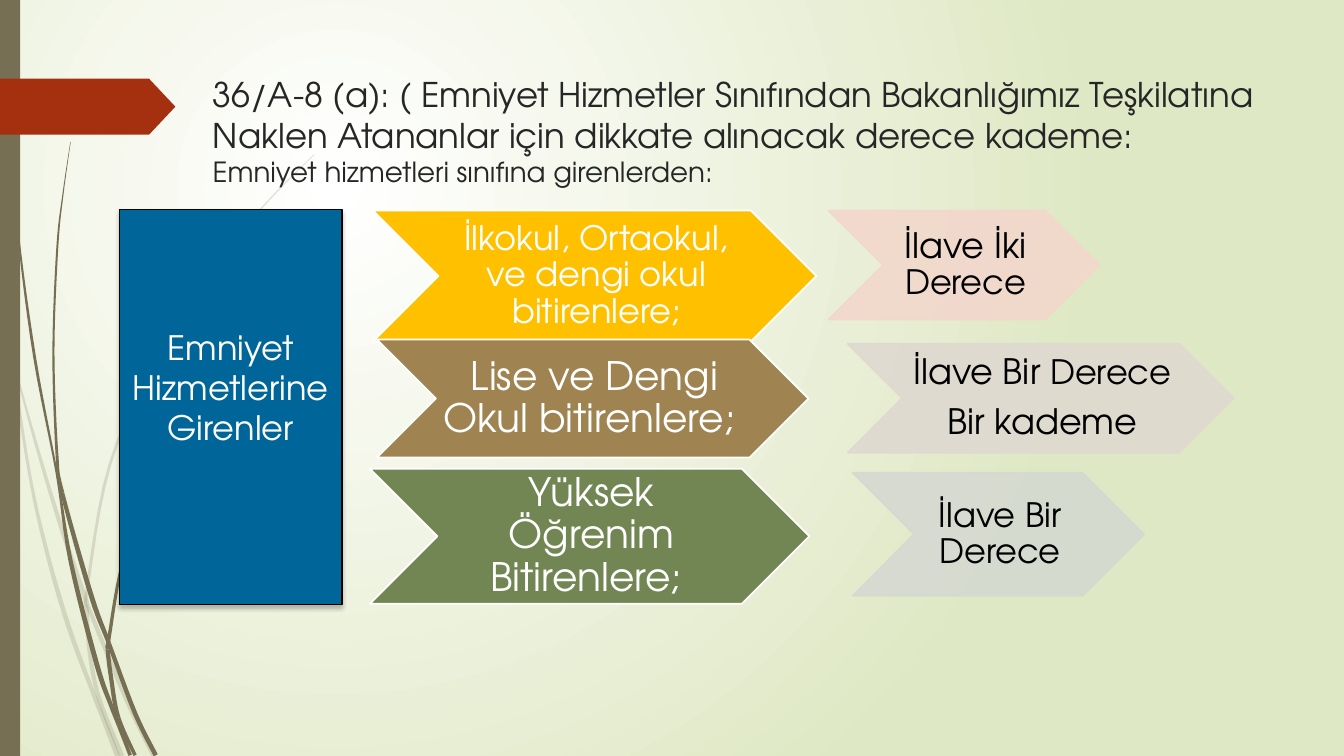
import math
from lxml import etree
from pptx import Presentation
from pptx import util as u
from pptx.dml.color import RGBColor
from pptx.enum import shapes, text
from pptx.oxml import parse_xml
from pptx.oxml.ns import qn

Pt = u.Pt
KIND = shapes.MSO_SHAPE
FONT = "TeX Gyre Adventor"
NS = 'xmlns:a="http://schemas.openxmlformats.org/drawingml/2006/main"'
HEX = {
    "white": "FFFFFF", "black": "000000", "ink": "262626", "sage": "DFE8C4",
    "stem": "766F54", "tag": "A53010", "blue": "006699",
    "gold": "FFC000", "brown": "9F8351", "green": "728653",
    "pink": "F2D8CC", "sand": "DFD9D0", "mist": "D5D9D1",
}

# Grass blades: joints where a blade is split, then its spine as (x, y, width)
FAINT = [
    ((1, 6), [(0, 209, 2), (7.5, 251, 2), (21, 338, 2.2), (33, 392.5, 2.8),
              (48.6, 446.4, 3.3), (66.5, 495, 3), (74, 514, 3.2),
              (84, 540, 3.6)]),
    ((5,), [(10.5, 249, 0), (11.7, 265, 1), (26, 318, 2.2), (43.2, 375, 3),
            (60.8, 427, 3.2), (64.8, 438, 3), (90, 499, 3.2),
            (109.8, 540, 3.3)]),
    ((5, 6, 8), [(224.6, 110.3, 0.5), (193, 142, 1), (164.5, 176, 1),
                 (114.5, 251, 1.7), (78.5, 332, 2), (62.3, 420.5, 2.2),
                 (62, 436, 3), (64, 465, 3), (70.5, 498, 3), (87, 540, 3.5)]),
]
DARK = [
    ((4, 8), [(2.5, 0, 0.7), (5.4, 79, 0.8), (13, 167.5, 1.3),
              (24.8, 255.6, 2), (40.5, 338, 1.5), (50.4, 400.5, 3),
              (69, 474, 3.5), (79, 503, 3), (84.7, 518, 2.6),
              (93, 539.5, 2.5)]),
    ((4, 5, 7), [(50.4, 101.5, 0.3), (45, 139, 0.8), (41, 176.4, 1.4),
                 (38.2, 251, 1.5), (40.7, 324.5, 2), (44.5, 352, 2.8),
                 (65.2, 425.5, 3.5), (78, 460, 3), (96.5, 509.5, 3.2),
                 (111.3, 539.5, 3.2)]),
    ((5, 6, 8), [(187.4, 247.7, 0.4), (166.3, 269, 1), (146.7, 292, 1),
                 (113, 342, 1.4), (89, 397, 2), (78, 455, 2.5), (77, 464, 3),
                 (79.5, 485, 3), (84.5, 512.5, 3), (96.5, 539.5, 2.5)]),
]

# Chevrons: box, fill, edge, font colour, opacity, paragraphs of (text, size) runs
STEPS = [
    ((266.4, 150.4, 316.8, 93.6), "gold", "white", "white", 100,
     [[("İlkokul, Ortaokul, ve dengi okul bitirenlere;", 24)]]),
    ((591.8, 150.4, 193.7, 77.8), "pink", "pink", "black", 90,
     [[("İlave İki ", 25), ("Derece", 24)]]),
    ((269.3, 242.6, 308.2, 84.2), "brown", "white", "white", 100,
     [[("Lise ve Dengi Okul bitirenlere; ", 28)]]),
    ((605.5, 245.5, 275.8, 77.8), "sand", "sand", "black", 90,
     [[("İlave Bir ", 25), ("Derece", 24)], [("Bir kademe", 25)]]),
    ((264.2, 334.8, 313.9, 96.5), "green", "white", "white", 100,
     [[("Yüksek Öğrenim Bitirenlere; ", 28)]]),
    ((609.1, 337.7, 208.1, 87.8), "mist", "mist", "black", 90,
     [[("İlave Bir Derece", 24)]]),
]


def tint(name):
    return RGBColor.from_string(HEX[name])


def paint(shape, fill, edge=None, width=1.25, alpha=100):
    shape.shadow.inherit = False
    shape.fill.solid()
    shape.fill.fore_color.rgb = tint(fill)
    if edge:
        shape.line.color.rgb = tint(edge)
        shape.line.width = Pt(width)
    else:
        shape.line.fill.background()
    if alpha < 100:
        for clr in shape.element.spPr.iter(qn("a:srgbClr")):
            etree.SubElement(clr, qn("a:alpha")).set("val", str(alpha * 1000))


def place(slide, kind, box):
    return slide.shapes.add_shape(kind, *map(Pt, box))


def style(par, size, color, align):
    par.alignment = align
    par.font.name = FONT
    par.font.color.rgb = tint(color)
    if size:
        par.font.size = Pt(size)


def smooth(pts, steps=6):
    """Catmull-Rom curve through the points, widths included."""
    ends = [pts[0], *pts, pts[-1]]
    out = []
    for a, b, c, d in zip(ends, ends[1:], ends[2:], ends[3:]):
        for i in range(steps):
            t = i / steps
            out.append([
                (2 * q + (r - p) * t + (2 * p - 5 * q + 4 * r - s) * t ** 2
                 + (3 * q - p - 3 * r + s) * t ** 3) / 2
                for p, q, r, s in zip(a, b, c, d)])
    return out + [list(pts[-1])]


def blade(slide, joints, spine, alpha, steps=6):
    pts = smooth(spine, steps)
    near, far = [], []
    for i, (x, y, w) in enumerate(pts):
        a, b = pts[max(i - 1, 0)], pts[min(i + 1, len(pts) - 1)]
        dx, dy = b[0] - a[0], b[1] - a[1]
        k = w / 2 / math.hypot(dx, dy)
        near.append((Pt(x - dy * k), Pt(y + dx * k)))
        far.append((Pt(x + dy * k), Pt(y - dx * k)))
    cuts = [0, *(j * steps for j in joints), len(pts) - 1]
    for a, b in zip(cuts, cuts[1:]):
        rim = near[a:b + 1] + far[a:b + 1][::-1]
        form = slide.shapes.build_freeform(*rim[0])
        form.add_line_segments(rim[1:], close=True)
        paint(form.convert_to_shape(), "stem", alpha=alpha)


def back(slide):
    # Radial gradient
    slide.background.fill.solid()
    old = slide.element.cSld.find(".//" + qn("a:solidFill"))
    stops = "".join(
        f'<a:gs pos="{pos}"><a:srgbClr val="{HEX[name]}"/></a:gs>'
        for pos, name in ((0, "white"), (100000, "sage")))
    old.getparent().replace(old, parse_xml(
        f'<a:gradFill {NS} rotWithShape="1"><a:gsLst>{stops}</a:gsLst>'
        '<a:path path="circle"><a:fillToRect l="50000" t="50000" '
        'r="100000" b="100000"/></a:path></a:gradFill>'))
    # Grass, side bar and red tag
    for blades, alpha in ((FAINT, 20), (DARK, 100)):
        for joints, spine in blades:
            blade(slide, joints, spine, alpha)
    paint(place(slide, KIND.RECTANGLE, (0, 0, 14.4, 540)), "stem")
    tag = place(slide, KIND.PENTAGON, (0, 56.2, 125.3, 40))
    tag.adjustments[0] = 0.47
    paint(tag, "tag")


def head(slide, box):
    title = slide.shapes.title
    # Bring the title in front of the grass
    title.element.getparent().append(title.element)
    title.left, title.top, title.width, title.height = map(Pt, box)
    frame = title.text_frame
    frame.word_wrap = True
    frame.auto_size = text.MSO_AUTO_SIZE.NONE
    frame.vertical_anchor = text.MSO_ANCHOR.TOP
    par = frame.paragraphs[0]
    style(par, None, "ink", text.PP_ALIGN.LEFT)
    main = par.add_run()
    main.text = ("36/A-8 (a): ( Emniyet Hizmetler Sınıfından Bakanlığımız "
                 "Teşkilatına Naklen Atananlar için dikkate alınacak "
                 "derece kademe:")
    main.font.size = Pt(24.3)
    par.add_line_break()
    sub = par.add_run()
    sub.text = "Emniyet hizmetleri sınıfına girenlerden:"
    sub.font.size = Pt(19.8)


def group(slide, box):
    card = place(slide, KIND.RECTANGLE, box)
    paint(card, "blue", "black", 0.75)
    glow = card.element.spPr.find(qn("a:effectLst"))
    glow.append(parse_xml(
        f'<a:outerShdw {NS} blurRad="{Pt(3)}" dist="{Pt(2)}" dir="5400000" '
        f'rotWithShape="0"><a:srgbClr val="{HEX["black"]}">'
        '<a:alpha val="25000"/></a:srgbClr></a:outerShdw>'))
    frame = card.text_frame
    frame.word_wrap = True
    frame.vertical_anchor = text.MSO_ANCHOR.MIDDLE
    frame.margin_bottom = Pt(32.4)
    par = frame.paragraphs[0]
    par.text = "Emniyet Hizmetlerine Girenler"
    style(par, 24, "white", text.PP_ALIGN.CENTER)


def step(slide, box, fill, edge, ink, alpha, lines):
    arrow = place(slide, KIND.CHEVRON, box)
    paint(arrow, fill, edge, alpha=alpha)
    frame = arrow.text_frame
    frame.word_wrap = True
    frame.vertical_anchor = text.MSO_ANCHOR.MIDDLE
    frame.margin_left, frame.margin_right = Pt(2.4), 0
    frame.margin_top = frame.margin_bottom = Pt(1.2)
    for i, runs in enumerate(lines):
        par = frame.add_paragraph() if i else frame.paragraphs[0]
        same = len(runs) == 1
        style(par, runs[0][1] if same else None, ink, text.PP_ALIGN.CENTER)
        par.line_spacing = 0.9
        par.space_after = Pt(8.5)
        for words, size in runs:
            run = par.add_run()
            run.text = words
            if not same:
                run.font.size = Pt(size)


def main():
    deck = Presentation()
    deck.slide_width, deck.slide_height = Pt(960), Pt(540)
    slide = deck.slides.add_slide(deck.slide_layouts[5])
    back(slide)
    head(slide, (144.7, 49, 776.9, 88.6))
    for row in STEPS:
        step(slide, *row)
    group(slide, (85.2, 149.8, 159.1, 282.2))
    deck.save("out.pptx")


if __name__ == "__main__":
    main()
